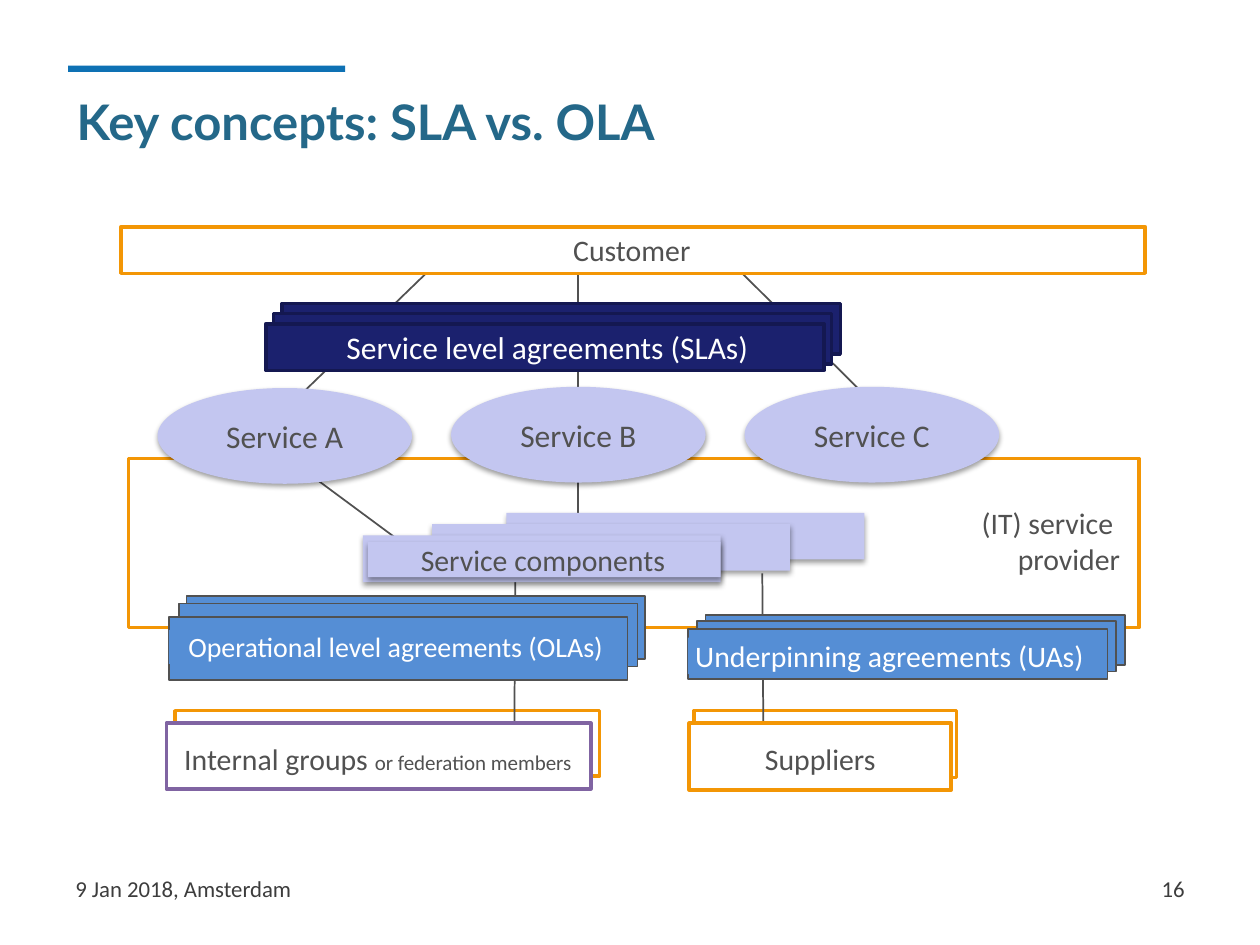
from lxml import etree
from pptx import Presentation
from pptx.dml.color import RGBColor
from pptx.enum.shapes import MSO_CONNECTOR, MSO_SHAPE
from pptx.enum.text import MSO_ANCHOR, PP_ALIGN
from pptx.oxml import parse_xml
from pptx.oxml.ns import nsdecls, qn
from pptx.util import Inches, Pt

WHITE = RGBColor(0xFF, 0xFF, 0xFF)
ACCENT = RGBColor(0x0E, 0x71, 0xB4)
TITLE = RGBColor(0x24, 0x68, 0x89)
FOOTER = RGBColor(0x3D, 0x3D, 0x3D)
GREY = RGBColor(0x51, 0x51, 0x51)
ORANGE = RGBColor(0xF3, 0x96, 0x05)
PURPLE = RGBColor(0x80, 0x64, 0xA2)
NAVY = RGBColor(0x1B, 0x21, 0x6E)
NAVY_EDGE = RGBColor(0x14, 0x18, 0x51)
LILAC = RGBColor(0xC3, 0xC6, 0xF0)
BLUE = RGBColor(0x55, 0x8E, 0xD5)

SHADOW = (
    f'<a:effectLst {nsdecls("a")}><a:outerShdw blurRad="{Pt(3.1)}" dist="{Pt(1.6)}" '
    'dir="5400000" rotWithShape="0"><a:srgbClr val="000000"><a:alpha val="38000"/>'
    '</a:srgbClr></a:outerShdw></a:effectLst>'
)

prs = Presentation()
prs.slide_width, prs.slide_height = Inches(10), Inches(7.5)
slide = prs.slides.add_slide(prs.slide_layouts[6])
CELL = prs.slide_width // 100  # the slide is 100 columns by 75 rows


def block(place, fill=None, edge=None, edge_pt=2, shape=MSO_SHAPE.RECTANGLE, shadow=False):
    """Add a shape at (column, row, columns, rows)."""
    part = slide.shapes.add_shape(shape, *[round(n * CELL) for n in place])
    part.shadow.inherit = False
    if shadow:
        props = part._element.spPr
        props.remove(props.find(qn("a:effectLst")))
        props.append(parse_xml(SHADOW))
    if fill is None:
        part.fill.background()
    else:
        part.fill.solid()
        part.fill.fore_color.rgb = fill
    if edge is None:
        part.line.fill.background()
    else:
        part.line.color.rgb = edge
        part.line.width = Pt(edge_pt)
    return part


def write(part, paragraphs, color, align=PP_ALIGN.CENTER, anchor=MSO_ANCHOR.TOP,
          margins=(0.4, 0, 0.4, 0), font="Calibri", bold=False):
    """Fill a shape with paragraphs, each a list of (text, points) runs."""
    frame = part.text_frame
    frame.word_wrap = True
    frame.vertical_anchor = anchor
    frame.margin_left, frame.margin_top, frame.margin_right, frame.margin_bottom = [
        round(n * CELL) for n in margins]
    for i, runs in enumerate(paragraphs):
        paragraph = frame.add_paragraph() if i else frame.paragraphs[0]
        paragraph.alignment = align
        for text, size in runs:
            run = paragraph.add_run()
            run.text = text
            run.font.size = Pt(size)
            run.font.name = font
            run.font.bold = bold
            run.font.color.rgb = color


# Heading and footer
block((5.4, 5.2, 22, 0.5), ACCENT)
for place, text, size, color, align, font in [
    ((71.7, 68.9, 23.3, 4), "16", 13, FOOTER, PP_ALIGN.RIGHT, "Calibri"),
    ((5.1, 6.8, 92.7, 6.3), "Key concepts: SLA vs. OLA", 28, TITLE, PP_ALIGN.LEFT, "Lato"),
    ((5, 68.9, 23.3, 4), "9 Jan 2018, Amsterdam", 13, FOOTER, PP_ALIGN.LEFT, "Calibri"),
]:
    box = slide.shapes.add_textbox(*[round(n * CELL) for n in place])
    write(box, [[(text, size)]], color, align, margins=(1, 0.5, 1, 0.5),
          font=font, bold=font == "Lato")

# Rear frames: suppliers, internal groups, service provider
for place in [(55.1, 56.4, 20.8, 5.3), (13.9, 56.4, 33.7, 5.2), (10.2, 36.4, 80.2, 13.4)]:
    block(place, WHITE, ORANGE)

# Relations between the levels, partly covered by the blocks that follow
for start_x, start_y, end_x, end_y in [
    (45.9, 18.7, 45.9, 44.1),
    (36.4, 19.2, 21, 34.1),
    (56.7, 19.5, 71.2, 33.9),
    (60.5, 45.5, 60.6, 60.4),
    (40.9, 45, 40.8, 62),
    (21, 35, 35.6, 45.8),
]:
    relation = slide.shapes.add_connector(
        MSO_CONNECTOR.STRAIGHT, *[round(n * CELL) for n in (start_x, start_y, end_x, end_y)])
    relation.line.color.rgb = GREY
    relation.line.width = Pt(1)
    etree.SubElement(relation._element.spPr, qn("a:effectLst"))

# Internal groups and suppliers
for place, edge, label_place, runs in [
    ((13.2, 57.4, 33.7, 5.2), PURPLE, (13.2, 58.8, 33.6, 2.9),
     [("Internal groups ", 17), ("or federation members", 12)]),
    ((54.7, 57.4, 20.8, 5.3), ORANGE, (54.7, 58.8, 20.8, 2.8), [("Suppliers", 17)]),
]:
    block(place, WHITE, edge)
    write(block(label_place), [runs], GREY)

# Stacks of agreements and components, from back to front
for corners, size, fill, edge, label_place, text, points, color in [
    ([(14.8, 47.3), (14.2, 47.9), (13.4, 49)], (36.4, 5), BLUE, GREY,
     (13.4, 50, 36.2, 2.7), "Operational level agreements (OLAs)", 16, WHITE),
    ([(56, 48.8), (55.3, 49.3), (54.6, 49.9)], (33.3, 4), BLUE, GREY,
     (54.6, 50.6, 32.2, 2.9), "Underpinning agreements (UAs)", 17, WHITE),
    ([(40.2, 40.7), (34.3, 41.6), (28.8, 42.5)], (28.4, 3.7), LILAC, None,
     (29.2, 43, 28, 2.8), "Service components", 17, GREY),
]:
    raised = edge is None
    for corner in corners:
        block(corner + size, fill, edge, 1, shadow=raised)
    label = block(label_place, fill, shadow=raised)
    write(label, [[(text, points)]], color, margins=(0.4, 0, 0.6, 0))

# Service level agreements
for place in [(22.4, 24.1, 44.3, 4), (21.7, 24.9, 44.3, 4), (21.1, 25.7, 44.3, 3.7)]:
    sla = block(place, NAVY, NAVY_EDGE)
write(sla, [[("Service level agreements (SLAs)", 18)]], WHITE,
      anchor=MSO_ANCHOR.MIDDLE, margins=(0.4, 0, 0, 0))

# Services
for i, (name, top) in enumerate([("A", 30.8), ("B", 30.7), ("C", 30.7)]):
    service = block((12.5 + 23.3 * i, top, 20.2, 7.6), LILAC, shape=MSO_SHAPE.OVAL, shadow=True)
    write(service, [[(f"Service {name}", 18)]], GREY,
          anchor=MSO_ANCHOR.MIDDLE, margins=(0, 0, 0, 0))

# Customer and service provider
customer = block((9.6, 18, 81.3, 3.7), WHITE, ORANGE)
write(customer, [[("Customer", 17)]], GREY,
      anchor=MSO_ANCHOR.MIDDLE, margins=(0.4, 0.2, 0.6, 0.2))
write(block((77.4, 40.1, 11.9, 5.7)), [[("(IT) service ", 17)], [("provider", 17)]],
      GREY, PP_ALIGN.RIGHT)

prs.save("out.pptx")
